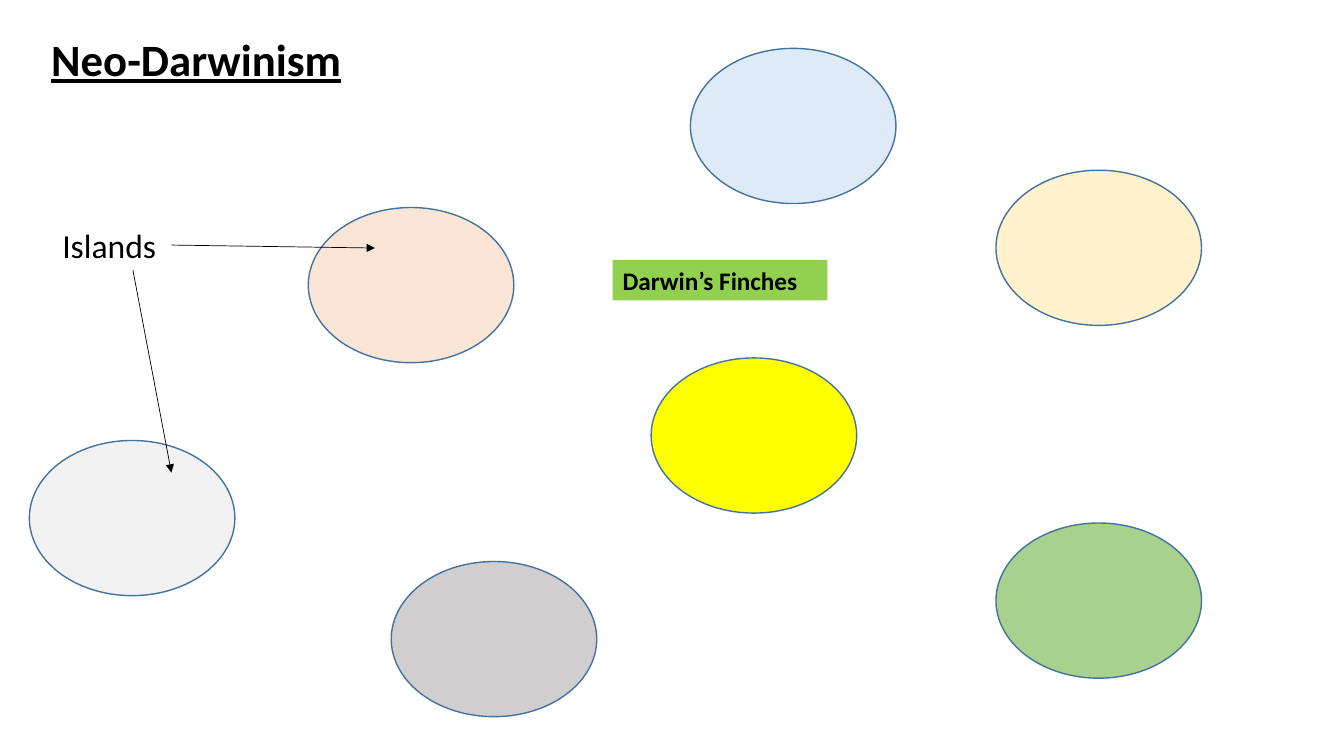
from lxml.etree import SubElement
from pptx import Presentation
from pptx.dml.color import RGBColor
from pptx.enum.shapes import MSO_CONNECTOR, MSO_SHAPE
from pptx.enum.text import MSO_ANCHOR
from pptx.oxml.ns import qn
from pptx.util import Cm, Pt

SLIDE_SIZE = (33.87, 19.05)
ISLAND_SIZE = (5.18, 3.91)
ISLANDS = [
    (7.77, 5.23, "FBE5D6"),
    (9.86, 14.15, "D0CECE"),
    (0.74, 11.1, "F2F2F2"),
    (16.41, 9.02, "FFFF00"),
    (17.4, 1.22, "DEEBF7"),
    (25.1, 13.18, "A9D18E"),
    (25.1, 4.29, "FFF2CC"),
]
TITLE = ("Neo-Darwinism", (1.04, 0.81, 7.87, 1.52))
ISLANDS_LABEL = ("Islands", (1.32, 5.54, 3, 1.27))
FINCHES_LABEL = ("Darwin’s Finches", (15.44, 6.55, 5.41, 1.02))
ARROW_TO_NEAR_ISLAND = ((4.32, 6.17), (9.45, 6.25))
ARROW_TO_LOWER_ISLAND = ((3.35, 6.81), (4.32, 11.91))


def color(hex_string):
    return RGBColor.from_string(hex_string)


def lengths(values):
    return [Cm(value) for value in values]


def add_text(slide, text, box, size, bold=False, underline=False,
             fill=None, anchor=MSO_ANCHOR.TOP, line_spacing=1.0):
    shape = slide.shapes.add_textbox(*lengths(box))
    if fill:
        shape.fill.solid()
        shape.fill.fore_color.rgb = color(fill)
    frame = shape.text_frame
    frame.word_wrap = True
    frame.vertical_anchor = anchor
    paragraph = frame.paragraphs[0]
    paragraph.line_spacing = line_spacing
    run = paragraph.add_run()
    run.text = text
    run.font.name = "Calibri"
    run.font.size = Pt(size)
    run.font.bold = bold
    run.font.underline = underline
    run.font.color.rgb = color("000000")
    return shape


def add_island(slide, left, top, fill):
    shape = slide.shapes.add_shape(MSO_SHAPE.OVAL, *lengths((left, top, *ISLAND_SIZE)))
    shape.shadow.inherit = False
    shape.fill.solid()
    shape.fill.fore_color.rgb = color(fill)
    shape.line.color.rgb = color("43739E")
    shape.line.width = Pt(1)


def add_arrow(slide, start, end):
    connector = slide.shapes.add_connector(MSO_CONNECTOR.STRAIGHT, *lengths(start + end))
    connector.line.color.rgb = color("000000")
    connector.line.width = Pt(0.5)
    properties = connector.element.spPr
    SubElement(properties.find(qn("a:ln")), qn("a:tailEnd"), type="triangle")
    SubElement(properties, qn("a:effectLst"))
    return connector


def main():
    presentation = Presentation()
    presentation.slide_width, presentation.slide_height = lengths(SLIDE_SIZE)
    slide = presentation.slides.add_slide(presentation.slide_layouts[6])

    add_text(slide, *TITLE, size=32, bold=True, underline=True,
             anchor=MSO_ANCHOR.MIDDLE, line_spacing=0.9)
    for island in ISLANDS:
        add_island(slide, *island)
    islands_label = add_text(slide, *ISLANDS_LABEL, size=24)
    add_arrow(slide, *ARROW_TO_NEAR_ISLAND).begin_connect(islands_label, 3)
    add_arrow(slide, *ARROW_TO_LOWER_ISLAND)
    add_text(slide, *FINCHES_LABEL, size=18, bold=True, fill="92D050")

    presentation.save("out.pptx")


if __name__ == "__main__":
    main()
